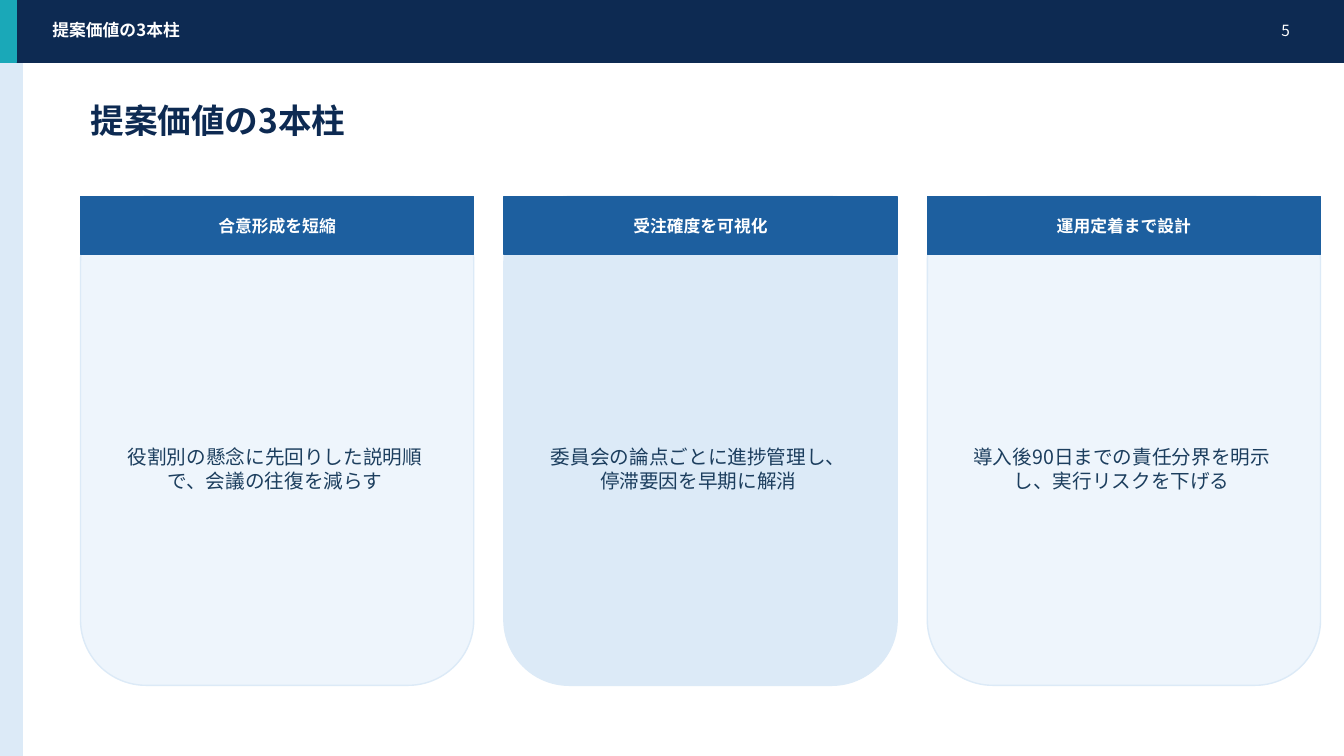
from dataclasses import dataclass

from lxml import etree
from pptx import Presentation
from pptx import util as u
from pptx.dml.color import RGBColor
from pptx.enum import shapes, text
from pptx.oxml import ns


@dataclass(frozen=True)
class Theme:
    """Colours, typeface and type sizes of the deck."""
    font: str = "Noto Sans CJK JP"
    white: str = "FFFFFF"
    navy: str = "0D2A52"
    teal: str = "1AA8B8"
    blue: str = "1D5F9F"
    ink: str = "1C3E5E"
    mist: str = "DCEAF7"
    pale: str = "EEF5FC"
    number: int = 11
    label: int = 12
    body: int = 14
    title: int = 24


class PageBuilder:
    """Draws styled elements on the current page."""

    def __init__(self, page, theme):
        self.page = page
        self.theme = theme

    def panel(self, left, top, width, height, fill, line=None, rounded=False):
        """Add a filled rectangle, optionally with rounded corners."""
        kind = shapes.MSO_SHAPE.ROUNDED_RECTANGLE if rounded else shapes.MSO_SHAPE.RECTANGLE
        box = self.page.shapes.add_shape(kind, u.Cm(left), u.Cm(top), u.Cm(width), u.Cm(height))
        box.shadow.inherit = False
        box.fill.solid()
        box.fill.fore_color.rgb = RGBColor.from_string(fill)
        box.line.color.rgb = RGBColor.from_string(line or fill)
        box.line.width = u.Pt(1)

    def words(self, left, top, width, height, content, size, color,
              bold=False, align=text.PP_ALIGN.LEFT):
        """Add a wrapped, vertically centred text box."""
        box = self.page.shapes.add_textbox(u.Cm(left), u.Cm(top), u.Cm(width), u.Cm(height))
        frame = box.text_frame
        frame.word_wrap = True
        frame.vertical_anchor = text.MSO_ANCHOR.MIDDLE
        para = frame.paragraphs[0]
        para.text = content
        para.alignment = align
        font = para.font
        font.name = self.theme.font
        font.size = u.Pt(size)
        font.bold = bold
        font.color.rgb = RGBColor.from_string(color)
        defaults = para._p.pPr.find(ns.qn("a:defRPr"))
        etree.SubElement(defaults, ns.qn("a:ea"), typeface=self.theme.font)

    def pillar(self, left, top, width, height, heading, body, fill):
        """Add a card with a heading band and centred body text."""
        theme = self.theme
        center = text.PP_ALIGN.CENTER
        self.panel(left, top, width, height, fill, theme.mist, rounded=True)
        self.panel(left, top, width, 1.47, theme.blue)
        self.words(left + 0.51, top + 0.43, width - 1.02, 0.61, heading,
                   theme.label, theme.white, bold=True, align=center)
        self.words(left + 0.71, top + 2.41, 8.38, 8.89, body,
                   theme.body, theme.ink, align=center)

    def frame(self, title, number):
        """Add the side strip, header bar, page number and title."""
        theme = self.theme
        self.panel(0, 1.4, 0.56, 17.65, theme.mist)
        self.panel(0, 0, 33.87, 1.57, theme.navy)
        self.panel(0, 0, 0.41, 1.57, theme.teal)
        self.words(1.07, 0.43, 22.35, 0.66, title, theme.label, theme.white, bold=True)
        self.words(30.86, 0.43, 1.9, 0.66, number, theme.number, theme.white,
                   align=text.PP_ALIGN.RIGHT)
        self.words(2.03, 2.41, 28.96, 1.22, title, theme.title, theme.navy, bold=True)


def main():
    """Build the three-pillar page and save the deck."""
    theme = Theme()
    deck = Presentation()
    deck.slide_width = u.Cm(33.87)
    deck.slide_height = u.Cm(19.05)
    builder = PageBuilder(deck.slides.add_slide(deck.slide_layouts[6]), theme)
    builder.frame("提案価値の3本柱", "5")
    pillars = [
        ("合意形成を短縮", "役割別の懸念に先回りした説明順で、会議の往復を減らす", theme.pale),
        ("受注確度を可視化", "委員会の論点ごとに進捗管理し、停滞要因を早期に解消", theme.mist),
        ("運用定着まで設計", "導入後90日までの責任分界を明示し、実行リスクを下げる", theme.pale),
    ]
    width, gap = 9.91, 0.76
    for index, (heading, body, fill) in enumerate(pillars):
        left = 2.03 + index * (width + gap)
        builder.pillar(left, 4.95, width, 12.32, heading, body, fill)
    deck.save("out.pptx")


if __name__ == "__main__":
    main()
